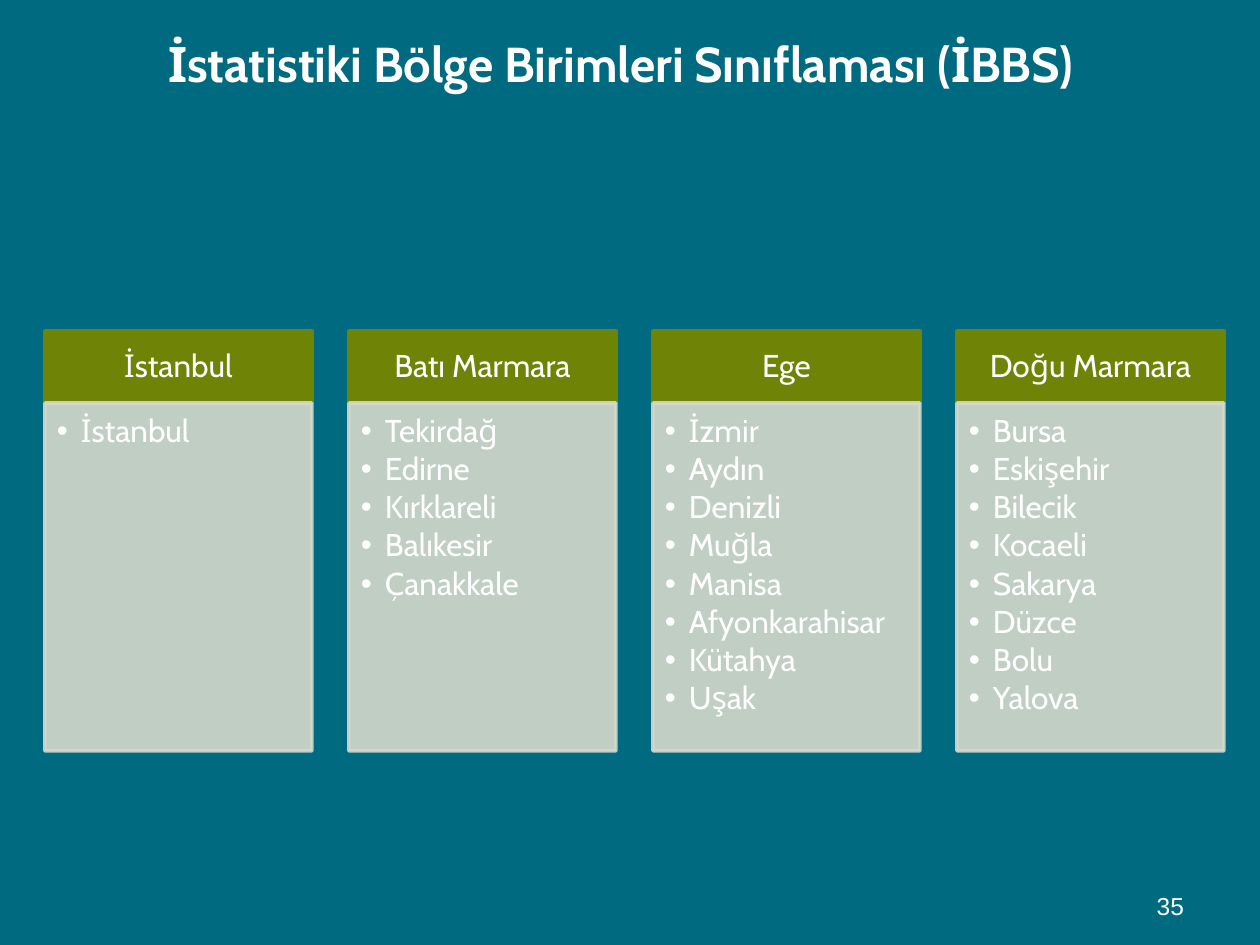
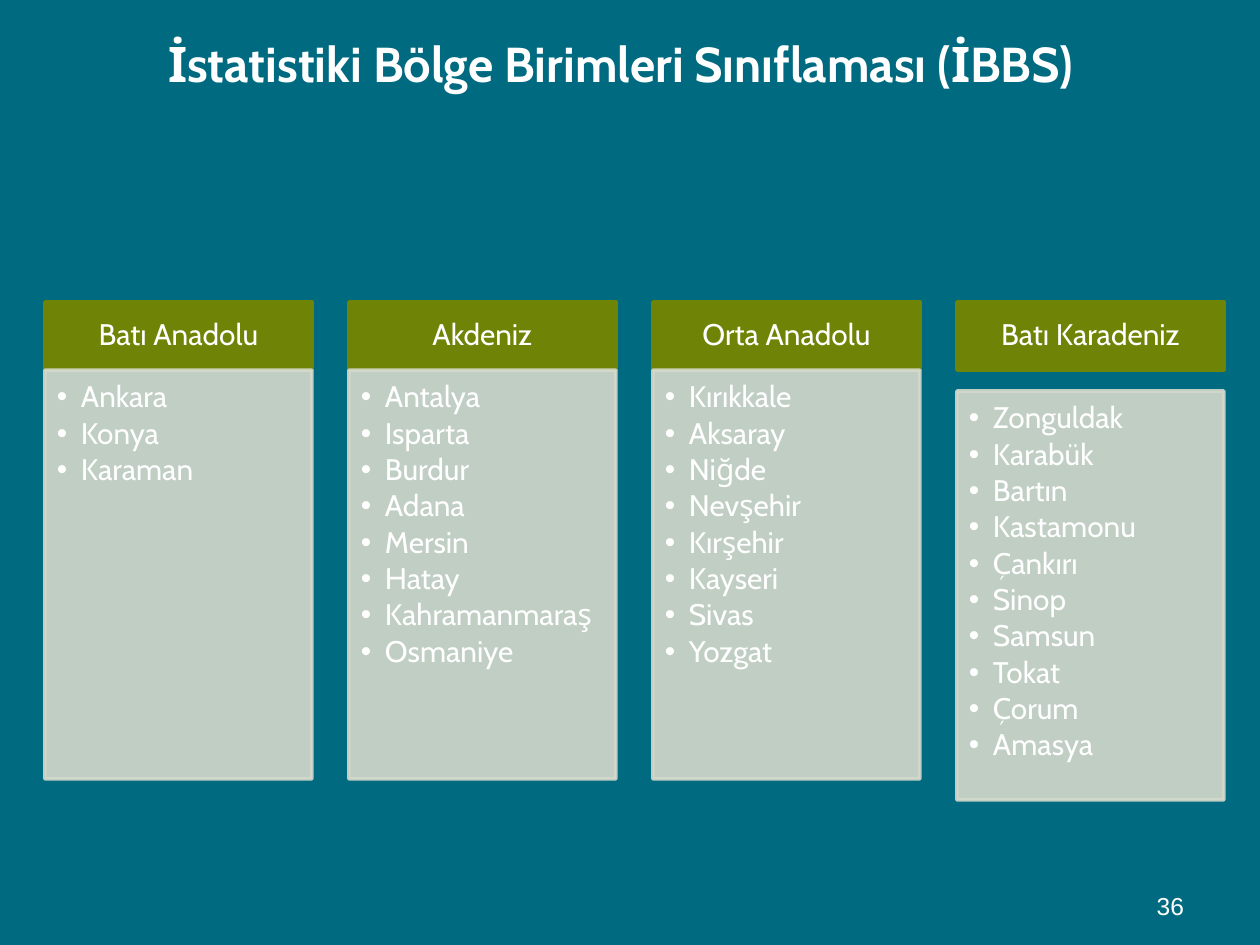
from dataclasses import dataclass
from typing import Any

from lxml import etree
from pptx import Presentation
from pptx.dml.color import RGBColor
from pptx.enum.shapes import MSO_SHAPE
from pptx.enum.text import MSO_ANCHOR, MSO_AUTO_SIZE, PP_ALIGN
from pptx.oxml.ns import qn
from pptx.util import Emu, Pt

RECT = MSO_SHAPE.RECTANGLE
TOP, MIDDLE, BOTTOM = MSO_ANCHOR.TOP, MSO_ANCHOR.MIDDLE, MSO_ANCHOR.BOTTOM
LEFT, CENTER, RIGHT = PP_ALIGN.LEFT, PP_ALIGN.CENTER, PP_ALIGN.RIGHT
NO_FIT = MSO_AUTO_SIZE.NONE

# Shared look
TEAL, OLIVE, PALE, WHITE = "006B80", "6F8406", "D5D9CC", "FFFFFF"
HEAD_FONT, NUMBER_FONT = "Cabin", "Arial"
TITLE = "İstatistiki Bölge Birimleri Sınıflaması (İBBS)"
PX_PER_INCH = 126
TITLE_ONLY = 5

# Column grid, in px
COL_LEFT, COL_PITCH, COL_WIDTH = 45, 304, 267
BULLET_INDENT = 24

Box = tuple[int, int, int, int]


@dataclass(frozen=True)
class Region:
    name: str
    provinces: tuple[str, ...]
    drop: int = 0  # extra gap between header and panel


@dataclass(frozen=True)
class RegionSlide:
    number: int
    top: int
    header_height: int
    panel_height: int
    text_size: int
    side_inset: int
    bottom_inset: int
    regions: tuple[Region, ...]


SLIDES = (
    RegionSlide(35, 331, 72, 348, 18, 18, 20, (
        Region("İstanbul", ("İstanbul",)),
        Region("Batı Marmara", ("Tekirdağ", "Edirne", "Kırklareli", "Balıkesir",
                                "Çanakkale")),
        Region("Ege", ("İzmir", "Aydın", "Denizli", "Muğla", "Manisa",
                       "Afyonkarahisar", "Kütahya", "Uşak")),
        Region("Doğu Marmara", ("Bursa", "Eskişehir", "Bilecik", "Kocaeli",
                                "Sakarya", "Düzce", "Bolu", "Yalova")),
    )),
    RegionSlide(36, 302, 68, 409, 17, 16, 19, (
        Region("Batı Anadolu", ("Ankara", "Konya", "Karaman")),
        Region("Akdeniz", ("Antalya", "Isparta", "Burdur", "Adana", "Mersin",
                           "Hatay", "Kahramanmaraş", "Osmaniye")),
        Region("Orta Anadolu", ("Kırıkkale", "Aksaray", "Niğde", "Nevşehir",
                                "Kırşehir", "Kayseri", "Sivas", "Yozgat")),
        Region("Batı Karadeniz", ("Zonguldak", "Karabük", "Bartın", "Kastamonu",
                                  "Çankırı", "Sinop", "Samsun", "Tokat", "Çorum",
                                  "Amasya"), drop=21),
    )),
)


def px(n: int) -> Emu:
    return Emu(round(n * 914400 / PX_PER_INCH))


def rgb(color: str) -> RGBColor:
    return RGBColor.from_string(color)


def set_all(obj: Any, values: dict[str, Any]) -> None:
    for name, value in values.items():
        setattr(obj, name, value)


def place(sp: Any, box: Box) -> None:
    set_all(sp, dict(zip(("left", "top", "width", "height"), map(px, box))))


def write(sp: Any, lines: tuple[str, ...], size: int, align: Any, anchor: Any,
          insets: Box = (13, 6, 13, 6), font: str = HEAD_FONT, bold: bool = False,
          bullets: bool = False, spacing: dict[str, Any] | None = None) -> None:
    """Fill a shape with white text, one paragraph a line."""
    tf = sp.text_frame
    set_all(tf, {"word_wrap": True, "auto_size": NO_FIT, "vertical_anchor": anchor})
    sides = ("margin_left", "margin_top", "margin_right", "margin_bottom")
    set_all(tf, dict(zip(sides, map(px, insets))))
    for i, line in enumerate(lines):
        p = tf.add_paragraph() if i else tf.paragraphs[0]
        if bullets:
            add_bullet(p)
        set_all(p, {"alignment": align, **(spacing or {})})
        r = p.add_run()
        r.text = line
        set_all(r.font, {"name": font, "size": Pt(size), "bold": bold})
        r.font.color.rgb = rgb(WHITE)


def add_bullet(p: Any) -> None:
    pPr = p._p.get_or_add_pPr()
    pPr.set("marL", str(px(BULLET_INDENT)))
    pPr.set("indent", str(-px(BULLET_INDENT)))
    etree.SubElement(pPr, qn("a:buFont"), typeface="Arial")
    etree.SubElement(pPr, qn("a:buChar"), char="•")


def add_block(s: Any, box: Box, color: str, opacity: int = 100) -> Any:
    """Rectangle whose fill and outline share one colour."""
    sp = s.shapes.add_shape(RECT, *map(px, box))
    sp.shadow.inherit = False
    sp.fill.solid()
    sp.fill.fore_color.rgb = rgb(color)
    sp.line.color.rgb = rgb(color)
    sp.line.width = Pt(2)
    if opacity < 100:
        for clr in sp.element.spPr.iter(qn("a:srgbClr")):
            etree.SubElement(clr, qn("a:alpha"), val=str(opacity * 1000))
    return sp


def add_region(s: Any, page: RegionSlide, region: Region, left: int) -> None:
    side = page.side_inset
    header = add_block(s, (left, page.top, COL_WIDTH, page.header_height), OLIVE)
    write(header, (region.name,), page.text_size, CENTER, MIDDLE,
          (side, 10, side, 10), spacing={"line_spacing": 0.9})

    panel_top = page.top + page.header_height + region.drop
    panel = add_block(s, (left, panel_top, COL_WIDTH, page.panel_height), PALE, 90)
    write(panel, region.provinces, page.text_size, LEFT, TOP,
          (12, 12, side, page.bottom_inset), bullets=True,
          spacing={"line_spacing": 0.9, "space_after": Pt(2.4)})


def add_region_slide(prs: Any, page: RegionSlide) -> None:
    s = prs.slides.add_slide(prs.slide_layouts[TITLE_ONLY])

    # Title
    title = s.shapes.title
    place(title, (144, 0, 953, 125))
    write(title, (TITLE,), 28, CENTER, MIDDLE, bold=True)

    # Slide number
    number = s.shapes.add_textbox(*map(px, (903, 861, 294, 65)))
    write(number, (str(page.number),), 14, RIGHT, BOTTOM, font=NUMBER_FONT)

    # Region columns
    for i, region in enumerate(page.regions):
        add_region(s, page, region, COL_LEFT + i * COL_PITCH)


def main() -> None:
    prs = Presentation()
    set_all(prs, {"slide_width": px(1260), "slide_height": px(945)})
    fill = prs.slide_master.background.fill
    fill.solid()
    fill.fore_color.rgb = rgb(TEAL)
    for page in SLIDES:
        add_region_slide(prs, page)
    prs.save("out.pptx")


if __name__ == "__main__":
    main()
